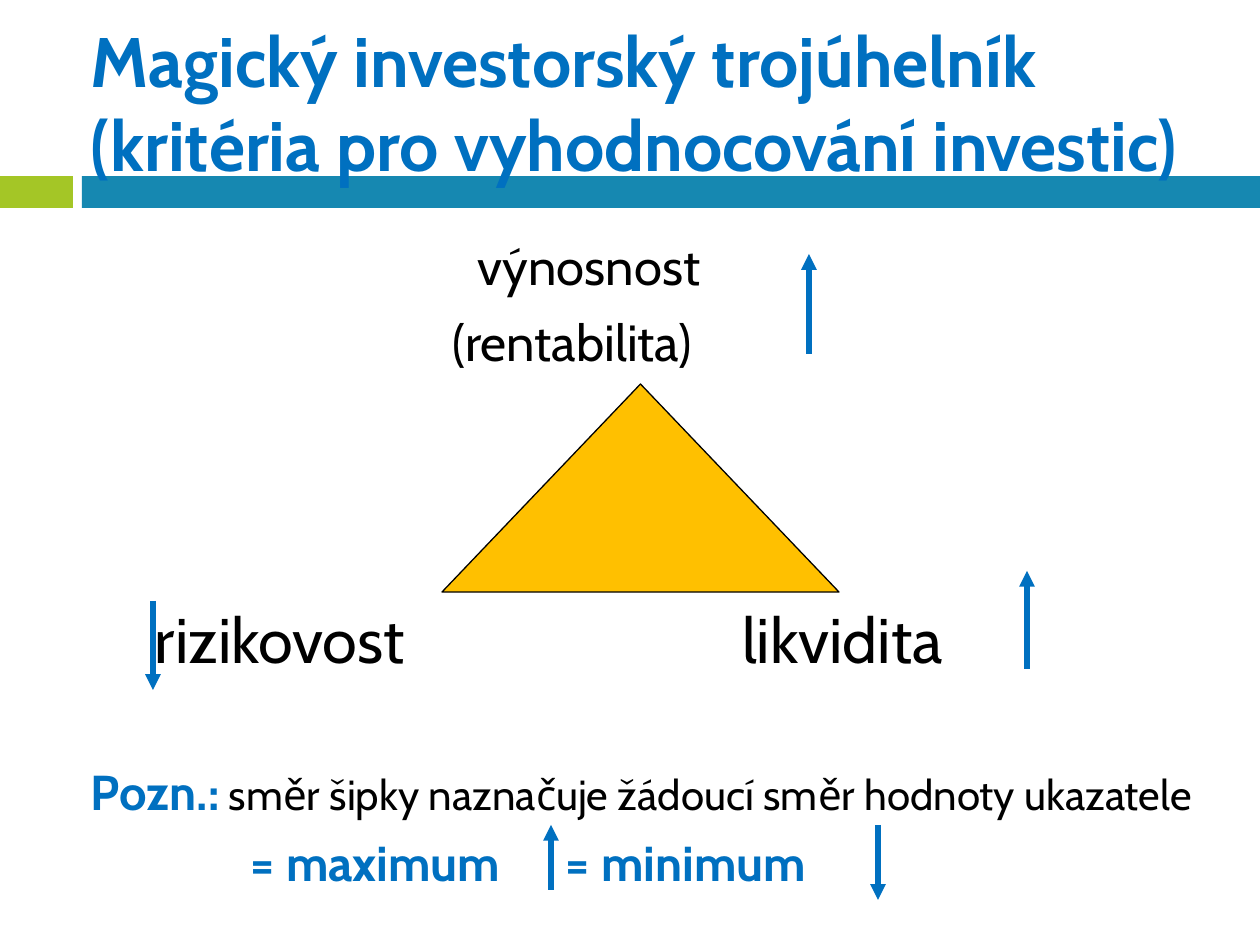
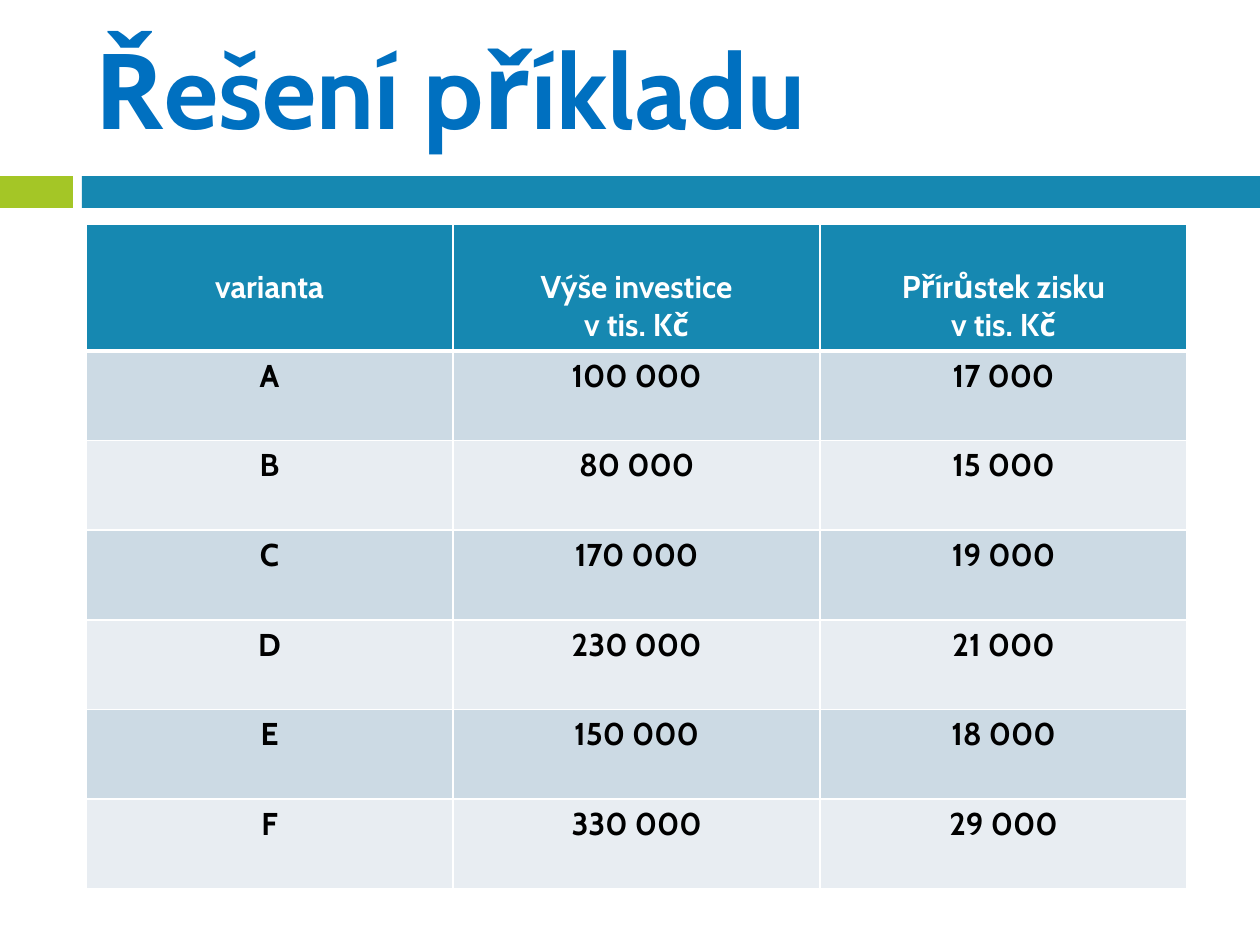
from collections import namedtuple
from dataclasses import dataclass

from lxml import etree
from pptx import Presentation
from pptx import util as u
from pptx.dml.color import RGBColor
from pptx.enum import shapes, text
from pptx.oxml import ns

PX_PER_INCH = 126
TITLE_ONLY = 5

Box = namedtuple("Box", "left top width height")


@dataclass(frozen=True)
class Theme:
    font: str = "Cabin"
    accent: str = "0070C0"
    ink: str = "000000"
    paper: str = "FFFFFF"
    green: str = "A4C626"
    teal: str = "1688B1"
    gold: str = "FFC000"
    row_dark: str = "CCDAE4"
    row_light: str = "E8EDF2"
    title: int = 40
    big_title: int = 60
    corner: int = 36
    apex: int = 29
    note: int = 28
    note_text: int = 24
    cell: int = 18
    arrow: int = 3
    outline: float = 0.75
    border: int = 1
    header_border: int = 3


THEME = Theme()

HEADERS = ["varianta", "Výše investice\nv tis. Kč", "Přírůstek zisku\nv tis. Kč"]
VARIANTS = [
    ("A", "100 000", "17 000"),
    ("B", "80 000", "15 000"),
    ("C", "170 000", "19 000"),
    ("D", "230 000", "21 000"),
    ("E", "150 000", "18 000"),
    ("F", "330 000", "29 000"),
]


def px(length):
    return u.Emu(round(length * 914400 / PX_PER_INCH))


def rgb(color):
    return RGBColor.from_string(color)


def style_font(font, size, color, bold=False):
    font.name = THEME.font
    font.size = u.Pt(size)
    font.bold = bold
    font.color.rgb = rgb(color)


def set_margins(frame, margin):
    frame.margin_left = frame.margin_right = px(margin)
    frame.margin_top = frame.margin_bottom = px(margin)


def add_filled(slide, preset, box, color):
    shape = slide.shapes.add_shape(preset, *map(px, box))
    shape.shadow.inherit = False
    shape.fill.solid()
    shape.fill.fore_color.rgb = rgb(color)
    shape.line.fill.background()
    return shape


def add_label(slide, box, wording, size, color=THEME.ink, bold=False):
    frame = slide.shapes.add_textbox(*map(px, box)).text_frame
    frame.word_wrap = True
    set_margins(frame, 0)
    paragraph = frame.paragraphs[0]
    paragraph.text = wording
    style_font(paragraph.font, size, color, bold)


def add_arrow(slide, x, start, end):
    """Draw a vertical arrow whose head is at end."""
    arrow = slide.shapes.add_connector(
        shapes.MSO_CONNECTOR.STRAIGHT, px(x), px(start), px(x), px(end))
    arrow.line.color.rgb = rgb(THEME.accent)
    arrow.line.width = u.Pt(THEME.arrow)
    line = arrow.element.spPr.find(ns.qn("a:ln"))
    etree.SubElement(line, ns.qn("a:tailEnd"), type="triangle")
    etree.SubElement(arrow.element.spPr, ns.qn("a:effectLst"))


def add_titled_slide(presentation, wording, box, size):
    """Add a slide with its title in front of the two shared bands."""
    slide = presentation.slides.add_slide(presentation.slide_layouts[TITLE_ONLY])
    title = slide.shapes.title
    for band, color in ((Box(0, 176, 73, 32), THEME.green),
                        (Box(82, 176, 1178, 32), THEME.teal)):
        shape = add_filled(slide, shapes.MSO_SHAPE.RECTANGLE, band, color)
        title.element.addprevious(shape.element)

    title.left, title.top, title.width, title.height = map(px, box)
    frame = title.text_frame
    frame.word_wrap = True
    frame.auto_size = text.MSO_AUTO_SIZE.NONE
    frame.vertical_anchor = text.MSO_ANCHOR.MIDDLE
    set_margins(frame, 6)
    paragraph = frame.paragraphs[0]
    paragraph.text = wording
    paragraph.alignment = text.PP_ALIGN.LEFT
    style_font(paragraph.font, size, THEME.accent, bold=True)
    return slide


def draw_triangle(slide, box):
    """Draw the triangle, its three criteria and their arrows."""
    left, top, width, height = box
    bottom = top + height
    triangle = add_filled(slide, shapes.MSO_SHAPE.ISOSCELES_TRIANGLE, box, THEME.gold)
    triangle.line.color.rgb = rgb(THEME.ink)
    triangle.line.width = u.Pt(THEME.outline)

    add_label(slide, Box(left + 36, top - 149, 300, 62), "výnosnost", THEME.apex)
    add_label(slide, Box(left + 11, top - 73, 300, 62), "(rentabilita)", THEME.apex)
    add_label(slide, Box(left - 287, bottom + 9, 300, 77), "rizikovost", THEME.corner)
    add_label(slide, Box(left + 300, bottom + 9, 260, 77), "likvidita", THEME.corner)

    add_arrow(slide, left + 367, top - 30, top - 130)
    add_arrow(slide, left - 289, bottom + 9, bottom + 98)
    add_arrow(slide, left + 585, bottom + 77, bottom - 21)


def draw_note(slide, box):
    """Explain the two arrow directions."""
    left, top, width, height = box
    frame = slide.shapes.add_textbox(*map(px, (left, top, width, 62))).text_frame
    frame.word_wrap = True
    set_margins(frame, 0)
    paragraph = frame.paragraphs[0]
    lead, explanation = paragraph.add_run(), paragraph.add_run()
    lead.text = "Pozn.:"
    style_font(lead.font, THEME.note, THEME.accent, bold=True)
    explanation.text = " směr šipky naznačuje žádoucí směr hodnoty ukazatele"
    style_font(explanation.font, THEME.note_text, THEME.ink)

    for offset, wording in ((160, "= maximum"), (475, "= minimum")):
        add_label(slide, Box(left + offset, top + 71, 280, 60), wording,
                  THEME.note, THEME.accent, bold=True)
    add_arrow(slide, left + 460, top + height - 10, top + 63)
    add_arrow(slide, left + 787, top + 63, top + height)


def set_borders(cell, top, bottom):
    properties = cell._tc.get_or_add_tcPr()
    widths = {"lnL": THEME.border, "lnR": THEME.border, "lnT": top, "lnB": bottom}
    for side, width in widths.items():
        line = etree.SubElement(properties, ns.qn(f"a:{side}"), w=str(u.Pt(width)))
        fill = etree.SubElement(line, ns.qn("a:solidFill"))
        etree.SubElement(fill, ns.qn("a:srgbClr"), val=THEME.paper)


def fill_cell(cell, wording, background, color, margin_top):
    cell.text = wording
    cell.margin_top = px(margin_top)
    cell.margin_bottom = px(6)
    cell.fill.solid()
    cell.fill.fore_color.rgb = rgb(background)
    for paragraph in cell.text_frame.paragraphs:
        paragraph.alignment = text.PP_ALIGN.CENTER
        style_font(paragraph.font, THEME.cell, color, bold=True)


def draw_variants(slide, box, header_height=126):
    rows = [HEADERS, *VARIANTS]
    table = slide.shapes.add_table(len(rows), len(HEADERS), *map(px, box)).table
    for column in table.columns:
        column.width = px(box.width / len(HEADERS))
    row_height = (box.height - header_height) / len(VARIANTS)
    for index, values in enumerate(rows):
        is_header = index == 0
        table.rows[index].height = px(header_height if is_header else row_height)
        if is_header:
            look = (THEME.teal, THEME.paper, 44)
        else:
            look = (THEME.row_dark if index % 2 else THEME.row_light, THEME.ink, 6)
        top = THEME.header_border if index == 1 else THEME.border
        bottom = THEME.header_border if is_header else THEME.border
        for column, wording in enumerate(values):
            cell = table.cell(index, column)
            set_borders(cell, top, bottom)
            fill_cell(cell, wording, *look)


def main():
    presentation = Presentation()
    presentation.slide_width, presentation.slide_height = px(1260), px(945)

    slide = add_titled_slide(
        presentation,
        "Magický investorský trojúhelník\v(kritéria pro vyhodnocování investic)",
        Box(85, 38, 1175, 127), THEME.title)
    draw_triangle(slide, Box(442, 384, 397, 208))
    draw_note(slide, Box(91, 762, 1160, 138))

    slide = add_titled_slide(presentation, "Řešení příkladu",
                             Box(89, 0, 1171, 175), THEME.big_title)
    draw_variants(slide, Box(86, 224, 1101, 664))

    presentation.save("out.pptx")


if __name__ == "__main__":
    main()
